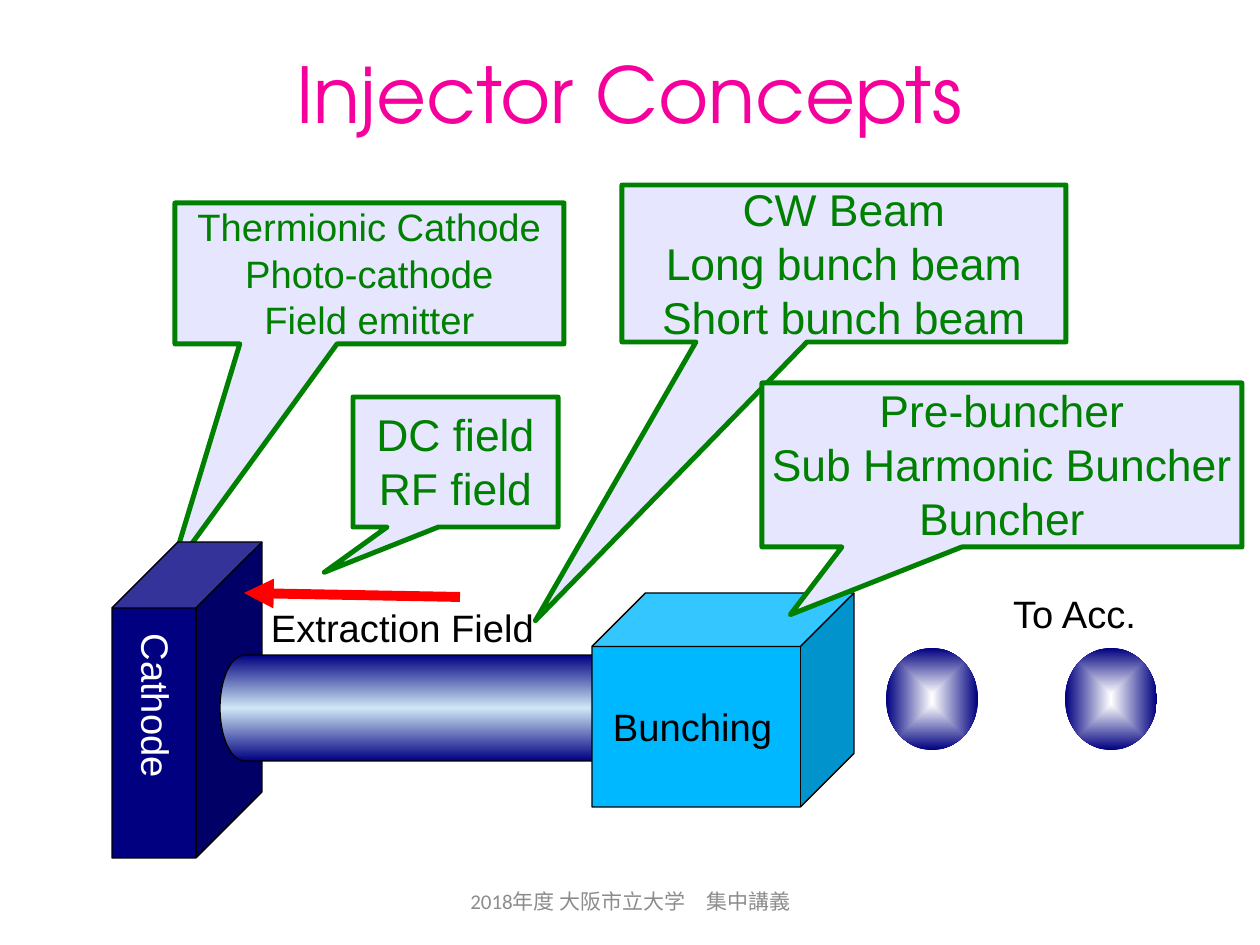
from lxml.etree import SubElement
from pptx import Presentation
from pptx.dml.color import RGBColor
from pptx.enum.shapes import MSO_CONNECTOR, MSO_SHAPE
from pptx.enum.text import MSO_ANCHOR, PP_ALIGN
from pptx.oxml import parse_xml
from pptx.oxml.ns import nsdecls, qn
from pptx.util import Pt

EMU_PER_PX = 914400 / 126

BLACK = RGBColor(0, 0, 0)
WHITE = RGBColor(255, 255, 255)
GREY = RGBColor(0x8C, 0x8C, 0x8C)
MAGENTA = RGBColor(0xF5, 0x00, 0x9D)
GREEN = RGBColor(0x00, 0x80, 0x00)
LAVENDER = RGBColor(0xE6, 0xE6, 0xFF)
NAVY = RGBColor(0x00, 0x00, 0x80)
PALE_BLUE = RGBColor(0xCF, 0xE7, 0xF5)
SKY = RGBColor(0x00, 0xB8, 0xFF)
RED = RGBColor(0xFF, 0x00, 0x00)

LABEL_SIZE = 21.8
CALLOUT_SIZE = 25.4

LABEL_FRAME = {"margin_left": 0, "margin_top": 4, "margin_right": 0,
               "margin_bottom": 0, "word_wrap": False}
CALLOUT_FRAME = {"margin_left": 2, "margin_top": 6, "margin_right": 2,
                 "margin_bottom": 2, "word_wrap": False,
                 "vertical_anchor": MSO_ANCHOR.MIDDLE}
CENTRED_FRAME = {"word_wrap": True, "vertical_anchor": MSO_ANCHOR.MIDDLE}


def px(*lengths):
    return [round(length * EMU_PER_PX) for length in lengths]


def write(frame, lines, size, color, frame_format, font="Arial",
          align=PP_ALIGN.LEFT, spacing=0.93):
    for name, value in frame_format.items():
        if name.startswith("margin"):
            value = px(value)[0]
        setattr(frame, name, value)
    for index, line in enumerate(lines):
        paragraph = frame.add_paragraph() if index else frame.paragraphs[0]
        paragraph.alignment = align
        paragraph.line_spacing = spacing
        if index:
            paragraph.space_before = Pt(round(size * 0.1, 1))
        run = paragraph.add_run()
        run.text = line
        for name, value in {"name": font, "size": Pt(size)}.items():
            setattr(run.font, name, value)
        run.font.color.rgb = color


def add_title(slide, text, box):
    title = slide.shapes.title
    title.left, title.top, title.width, title.height = px(*box)
    write(title.text_frame, [text], 44, MAGENTA, CENTRED_FRAME,
          font="TeX Gyre Adventor", align=PP_ALIGN.CENTER, spacing=1.0)


def add_label(slide, text, box, color=BLACK, rotation=0):
    label = slide.shapes.add_textbox(*px(*box))
    label.rotation = rotation
    write(label.text_frame, [text], LABEL_SIZE, color, LABEL_FRAME)


def add_solid(slide, preset, box, adjustments=(), fill=None, line=None, weight=0.75):
    solid = slide.shapes.add_shape(preset, *px(*box))
    solid.shadow.inherit = False
    for index, value in enumerate(adjustments):
        solid.adjustments[index] = value
    if fill is not None:
        solid.fill.solid()
        solid.fill.fore_color.rgb = fill
    if line is None:
        solid.line.fill.background()
    else:
        solid.line.color.rgb = line
        solid.line.width = Pt(weight)
    return solid


def add_callout(slide, lines, box, pointer, size=CALLOUT_SIZE):
    callout = add_solid(slide, MSO_SHAPE.RECTANGULAR_CALLOUT, box, pointer,
                        LAVENDER, GREEN, 2.83)
    write(callout.text_frame, lines, size, GREEN, CALLOUT_FRAME,
          align=PP_ALIGN.CENTER)


def set_gradient(shape, stops, direction):
    """Fill with (percent, colour) stops; direction is the a:lin or a:path XML."""
    stop_xml = "".join(
        f'<a:gs pos="{percent * 1000}"><a:srgbClr val="{color}"/></a:gs>'
        for percent, color in stops)
    gradient = parse_xml(
        f'<a:gradFill {nsdecls("a")} rotWithShape="0">'
        f"<a:gsLst>{stop_xml}</a:gsLst>{direction}</a:gradFill>")
    shape.element.spPr.find(qn("a:prstGeom")).addnext(gradient)


def add_bunch(slide, box):
    bunch = add_solid(slide, MSO_SHAPE.OVAL, box)
    set_gradient(bunch, [(0, WHITE), (100, NAVY)],
                 '<a:path path="shape"><a:fillToRect l="50000" t="50000" '
                 'r="50000" b="50000"/></a:path>')


def add_beam_pipe(slide, box):
    pipe = add_solid(slide, MSO_SHAPE.CAN, box, [0.463], line=BLACK)
    pipe.rotation = 90
    set_gradient(pipe, [(0, NAVY), (50, PALE_BLUE), (100, NAVY)],
                 '<a:lin ang="5400000" scaled="0"/>')


def add_arrow(slide, ends, color, weight):
    arrow = slide.shapes.add_connector(MSO_CONNECTOR.STRAIGHT, *px(*ends))
    arrow.line.color.rgb = color
    arrow.line.width = Pt(weight)
    SubElement(arrow.line._get_or_add_ln(), qn("a:tailEnd"), type="triangle")
    SubElement(arrow.element.spPr, qn("a:effectLst"))


def main():
    deck = Presentation()
    deck.slide_width, deck.slide_height = px(1260, 945)
    slide = deck.slides.add_slide(deck.slide_layouts[5])

    add_title(slide, "Injector Concepts", (101, 3, 1057, 180))
    footer = slide.shapes.add_textbox(*px(431, 876, 399, 50))
    write(footer.text_frame, ["2018年度 大阪市立大学　集中講義"], 12, GREY,
          CENTRED_FRAME, font="Calibri", align=PP_ALIGN.CENTER, spacing=1.0)

    add_label(slide, "To Acc.", (1013, 590, 130, 43))
    add_callout(slide, ["Thermionic Cathode", "Photo-cathode", "Field emitter"],
                (175, 203, 389, 141), (-0.513, 2.13), LABEL_SIZE)
    add_label(slide, "Extraction Field", (271, 604, 275, 43))
    add_callout(slide, ["CW Beam", "Long bunch beam", "Short bunch beam"],
                (622, 185, 444, 157), (-0.695, 2.275))
    add_callout(slide, ["DC field", "RF field"],
                (353, 397, 205, 130), (-0.64, 0.848))

    add_solid(slide, MSO_SHAPE.CUBE, (112, 542, 150, 316), [0.44], NAVY, BLACK)
    add_beam_pipe(slide, (387, 488, 106, 440))
    add_label(slide, "Cathode", (58, 672, 160, 83), WHITE, rotation=90)
    add_arrow(slide, (460, 597, 244, 593), RED, 5.67)

    buncher = add_solid(slide, MSO_SHAPE.CUBE, (592, 593, 262, 214), [0.25],
                        SKY, BLACK)
    write(buncher.text_frame, ["Bunching"], LABEL_SIZE, BLACK,
          LABEL_FRAME | CENTRED_FRAME | {"margin_left": 21})
    add_callout(slide, ["Pre-buncher", "Sub Harmonic Buncher", "Buncher"],
                (762, 383, 480, 164), (-0.441, 0.913))
    for left in (886, 1065):
        add_bunch(slide, (left, 648, 92, 102))

    deck.save("out.pptx")


if __name__ == "__main__":
    main()
